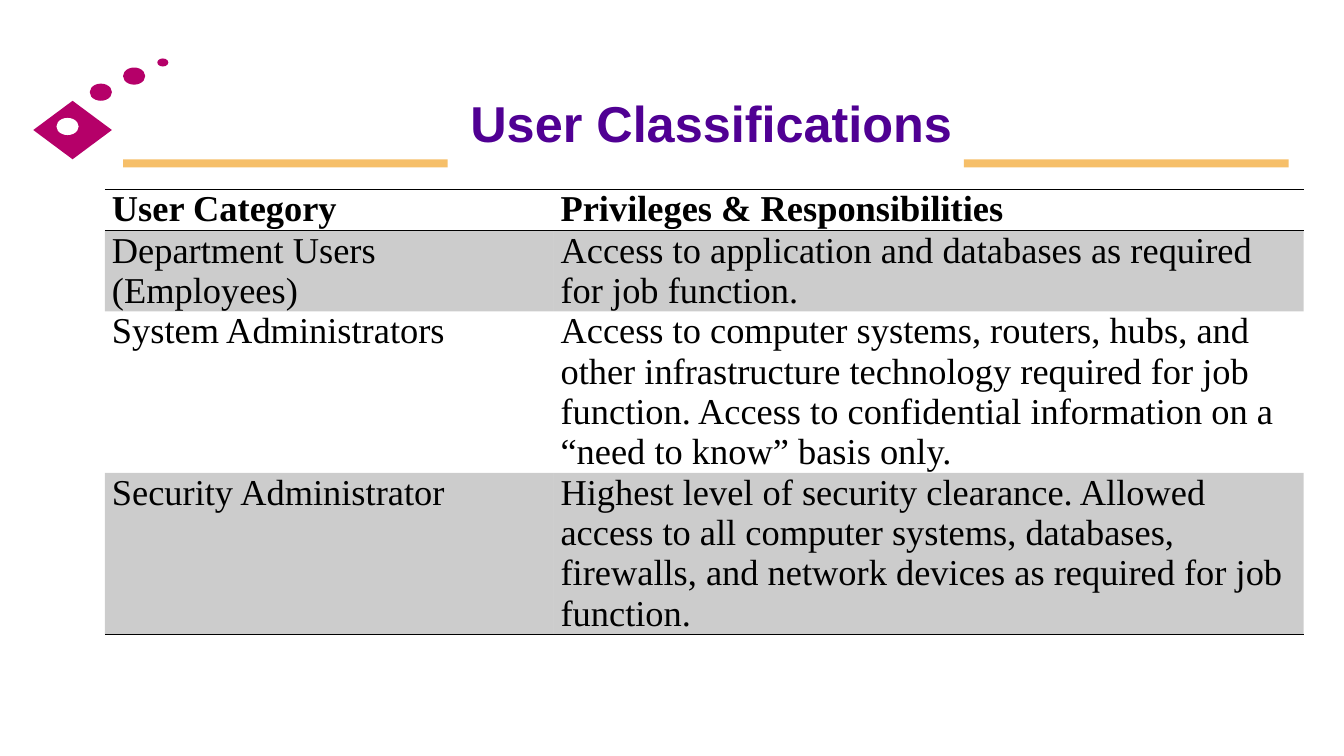
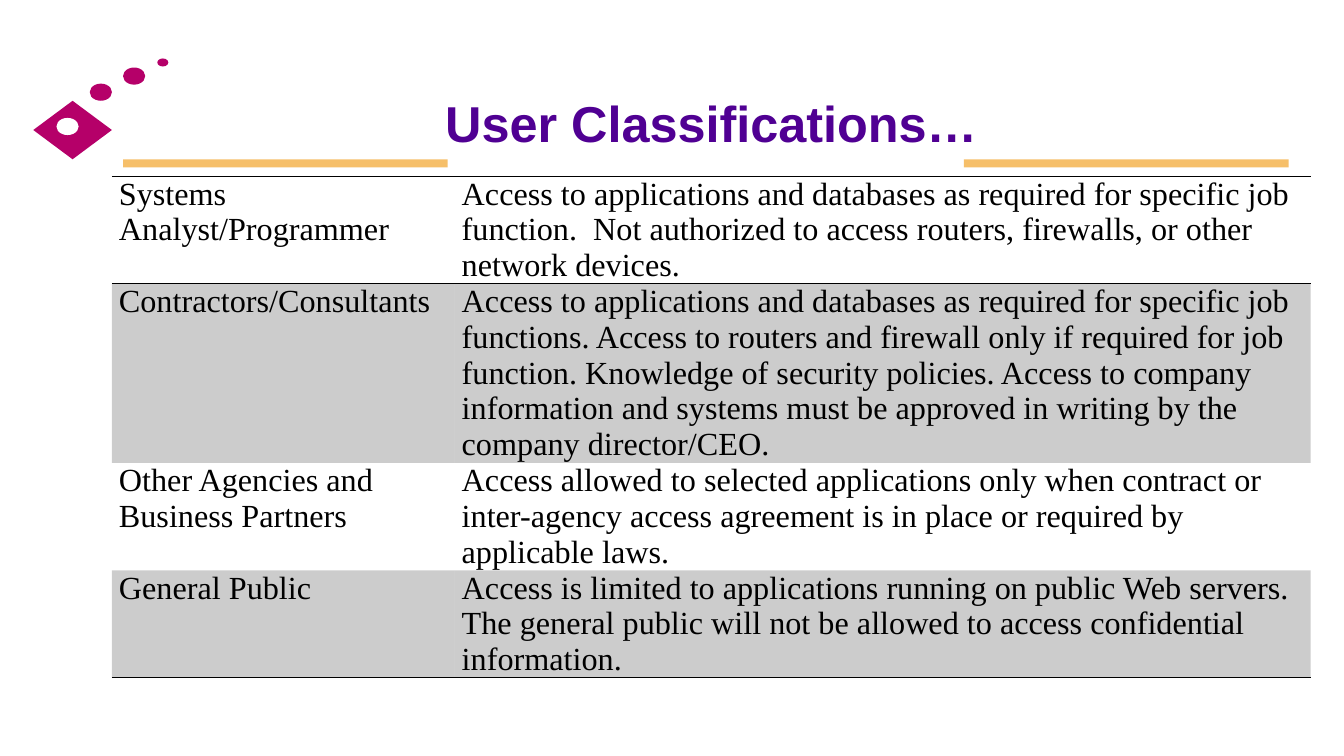
from lxml import etree
from pptx import Presentation
from pptx.dml.color import RGBColor
from pptx.enum.shapes import MSO_SHAPE
from pptx.enum.text import MSO_ANCHOR, MSO_AUTO_SIZE, PP_ALIGN
from pptx.oxml.ns import qn
from pptx.util import Inches, Pt

COLORS = {
    "title": "500093",
    "text": "000000",
    "bar": "F6BF69",
    "ornament": "B50069",
    "background": "FFFFFF",
}
TITLE_FONT = "Arial"
TABLE_FONT = "Times New Roman"
PLAIN_TABLE_STYLE = "{2D5ABB26-0587-4C30-8999-92F81FD0307C}"
ROW_HEIGHT = 0.41
BAND_OPACITY = 20

# shape, colour, (left, top, width, height)
DECORATIONS = [
    (MSO_SHAPE.RECTANGLE, "bar", (1.22, 1.58, 3.22, 0.08)),
    (MSO_SHAPE.RECTANGLE, "bar", (9.56, 1.58, 3.22, 0.08)),
    (MSO_SHAPE.DIAMOND, "ornament", (0.33, 1, 0.78, 0.58)),
    (MSO_SHAPE.OVAL, "background", (0.56, 1.17, 0.22, 0.17)),
    (MSO_SHAPE.OVAL, "ornament", (0.89, 0.83, 0.22, 0.17)),
    (MSO_SHAPE.OVAL, "ornament", (1.22, 0.67, 0.22, 0.17)),
    (MSO_SHAPE.OVAL, "ornament", (1.56, 0.58, 0.11, 0.08)),
]

STAFF_ROWS = [
    ("User Category", "Privileges & Responsibilities"),
    ("Department Users (Employees)",
     "Access to application and databases as required for job function."),
    ("System Administrators",
     "Access to computer systems, routers, hubs, and other infrastructure "
     "technology required for job function. Access to confidential "
     "information on a “need to know” basis only."),
    ("Security Administrator",
     "Highest level of security clearance. Allowed access to all computer "
     "systems, databases, firewalls, and network devices as required for "
     "job function."),
]
OTHER_USER_ROWS = [
    ("Systems Analyst/Programmer",
     "Access to applications and databases as required for specific job "
     "function.  Not authorized to access routers, firewalls, or other "
     "network devices."),
    ("Contractors/Consultants",
     "Access to applications and databases as required for specific job "
     "functions. Access to routers and firewall only if required for job "
     "function. Knowledge of security policies. Access to company "
     "information and systems must be approved in writing by the company "
     "director/CEO."),
    ("Other Agencies and Business Partners",
     "Access allowed to selected applications only when contract or "
     "inter-agency access agreement is in place or required by applicable "
     "laws."),
    ("General Public",
     "Access is limited to applications running on public Web servers. The "
     "general public will not be allowed to access confidential "
     "information."),
]


def rgb(name):
    return RGBColor.from_string(COLORS[name])


class Deck:
    def __init__(self):
        self.prs = Presentation()
        self.prs.slide_width = Inches(13.33)
        self.prs.slide_height = Inches(7.5)
        self.slide = None

    def add_slide(self, title):
        self.slide = self.prs.slides.add_slide(self.prs.slide_layouts[5])
        background = self.slide.background.fill
        background.solid()
        background.fore_color.rgb = rgb("background")
        for kind, color, box in DECORATIONS:
            self.add_decoration(kind, color, box)
        self.set_title(title)

    def add_decoration(self, kind, color, box):
        shape = self.slide.shapes.add_shape(kind, *map(Inches, box))
        shape.shadow.inherit = False
        shape.fill.solid()
        shape.fill.fore_color.rgb = rgb(color)
        shape.line.fill.background()

    def set_title(self, text):
        title = self.slide.shapes.title
        title.left, title.top = Inches(1.11), Inches(0.67)
        title.width, title.height = Inches(11.89), Inches(1.08)
        frame = title.text_frame
        frame.auto_size = MSO_AUTO_SIZE.NONE
        frame.word_wrap = True
        frame.vertical_anchor = MSO_ANCHOR.MIDDLE
        frame.paragraphs[0].alignment = PP_ALIGN.CENTER
        self.add_run(frame, text, TITLE_FONT, 36, "title", True)

    def add_run(self, frame, text, font, size, color, bold):
        run = frame.paragraphs[0].add_run()
        run.text = text
        run.font.name = font
        run.font.size = Pt(size)
        run.font.bold = bold
        run.font.color.rgb = rgb(color)

    def add_table(self, left, top, widths, rows, size, header=False):
        """Draw a table with rules around its first row and below its last."""
        frame = self.slide.shapes.add_table(
            len(rows), len(widths), Inches(left), Inches(top),
            Inches(sum(widths)), Inches(ROW_HEIGHT * len(rows)))
        next(frame.element.iter(qn("a:tableStyleId"))).text = PLAIN_TABLE_STYLE
        table = frame.table
        table.first_row = header
        table.horz_banding = False
        for column, width in zip(table.columns, widths):
            column.width = Inches(width)
        for r, texts in enumerate(rows):
            table.rows[r].height = Inches(ROW_HEIGHT)
            for c, text in enumerate(texts):
                cell = table.cell(r, c)
                cell.margin_left = cell.margin_right = Inches(0.07)
                cell.margin_top = cell.margin_bottom = 0
                self.add_run(cell.text_frame, text, TABLE_FONT, size, "text",
                             header and r == 0)
                if r == 0:
                    self.add_rule(cell, "a:lnT")
                if r in (0, len(rows) - 1):
                    self.add_rule(cell, "a:lnB")
                self.fill_cell(cell, shaded=r % 2 == 1)

    def add_rule(self, cell, edge):
        properties = cell._tc.get_or_add_tcPr()
        line = etree.SubElement(properties, qn(edge), w=str(Pt(1)))
        fill = etree.SubElement(line, qn("a:solidFill"))
        etree.SubElement(fill, qn("a:srgbClr"), val=COLORS["text"])

    def fill_cell(self, cell, shaded):
        if not shaded:
            cell.fill.background()
            return
        cell.fill.solid()
        cell.fill.fore_color.rgb = rgb("text")
        color = cell._tc.tcPr.find(qn("a:solidFill")).find(qn("a:srgbClr"))
        etree.SubElement(color, qn("a:alpha"), val=str(BAND_OPACITY * 1000))


def main():
    deck = Deck()
    deck.add_slide("User Classifications")
    deck.add_table(1.04, 1.88, (4.45, 7.44), STAFF_ROWS, 26, header=True)
    deck.add_slide("User Classifications…")
    deck.add_table(1.11, 1.75, (3.4, 8.49), OTHER_USER_ROWS, 23)
    deck.prs.save("out.pptx")


if __name__ == "__main__":
    main()
